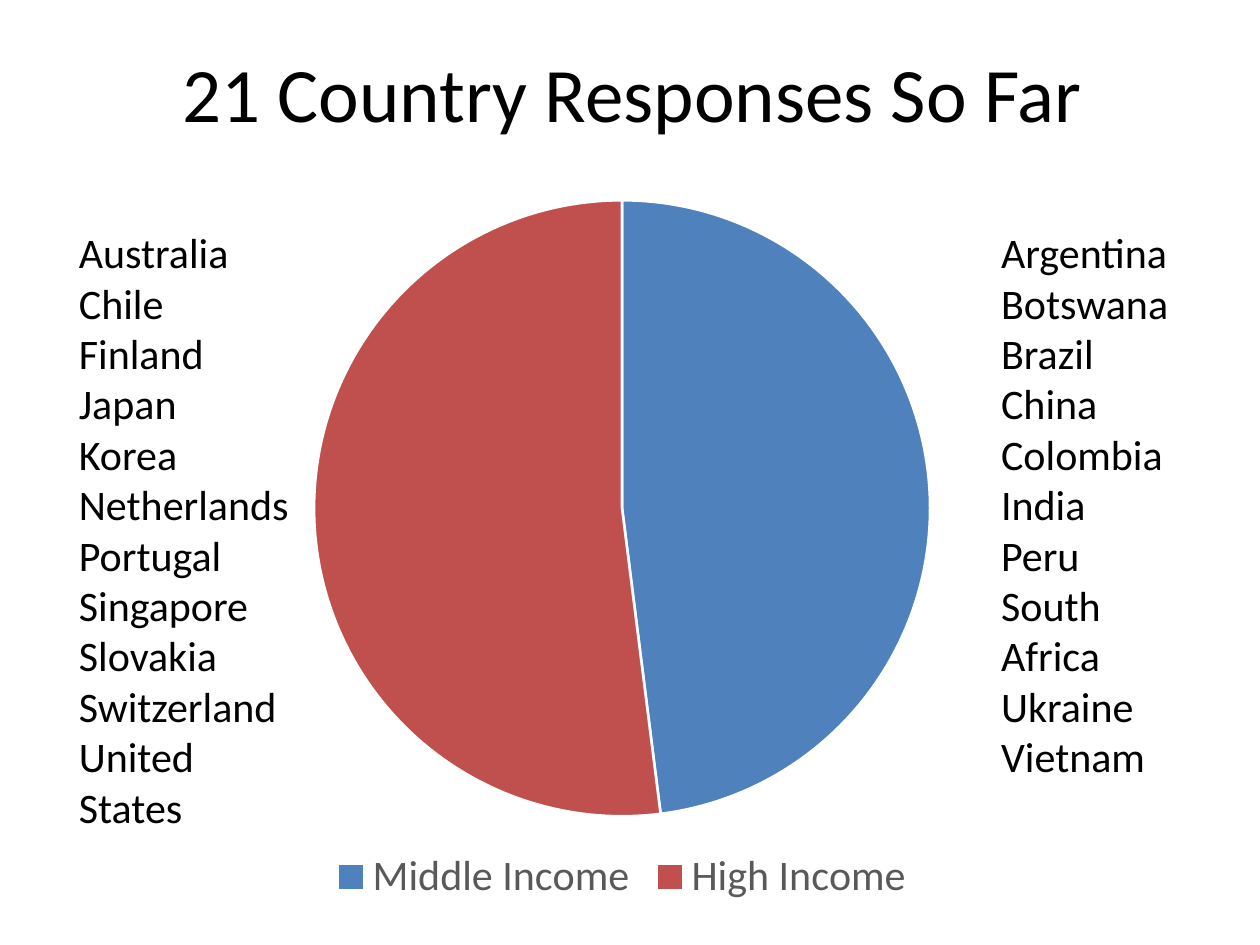
"""Build the slide showing country responses by income group."""
from dataclasses import dataclass

from pptx import Presentation
from pptx.chart.data import CategoryChartData
from pptx.dml.color import RGBColor
from pptx.enum.chart import XL_CHART_TYPE, XL_LEGEND_POSITION
from pptx.enum.text import MSO_ANCHOR, MSO_AUTO_SIZE, PP_ALIGN
from pptx.util import Pt

PIE = XL_CHART_TYPE.PIE
LEGEND_BOTTOM = XL_LEGEND_POSITION.BOTTOM
MIDDLE = MSO_ANCHOR.MIDDLE
GROW = MSO_AUTO_SIZE.SHAPE_TO_FIT_TEXT
CENTER = PP_ALIGN.CENTER
LEFT = PP_ALIGN.LEFT

TITLE = "21 Country Responses So Far"
HIGH_INCOME = ["Australia", "Chile", "Finland", "Japan", "Korea", "Netherlands",
               "Portugal", "Singapore", "Slovakia", "Switzerland", "United States"]
MIDDLE_INCOME = ["Argentina", "Botswana", "Brazil", "China", "Colombia", "India",
                 "Peru", "South Africa", "Ukraine", "Vietnam"]
SHARES = {"Middle Income": 48, "High Income": 52}

TITLE_BOX = (51, 0, 621, 104.5)
CHART_BOX = (99.5, 104.5, 512, 416)
COUNTRY_LISTS = [(HIGH_INCOME, (38, 126, 136, 356.5)),
                 (MIDDLE_INCOME, (565, 126, 119, 327))]


@dataclass(frozen=True)
class Theme:
    font: str = "Calibri"
    title_size: int = 44
    body_size: int = 24
    chart_size: int = 10
    text: str = "000000"
    legend: str = "595959"
    edge: str = "FFFFFF"
    slices: tuple = ("4F81BD", "C0504D")


THEME = Theme()


def points(box):
    return [Pt(length) for length in box]


def style_font(font, size, color):
    font.name = THEME.font
    font.size = Pt(size)
    font.color.rgb = RGBColor.from_string(color)


def style_text(frame, size, alignment):
    for paragraph in frame.paragraphs:
        paragraph.alignment = alignment
        for run in paragraph.runs:
            style_font(run.font, size, THEME.text)


def add_title(slide):
    title = slide.shapes.title
    title.left, title.top, title.width, title.height = points(TITLE_BOX)
    frame = title.text_frame
    frame.text = TITLE
    frame.vertical_anchor = MIDDLE
    style_text(frame, THEME.title_size, CENTER)


def add_income_chart(slide):
    data = CategoryChartData()
    data.categories = list(SHARES)
    data.add_series("Series 1", list(SHARES.values()))
    chart = slide.shapes.add_chart(PIE, *points(CHART_BOX), data).chart
    style_font(chart.font, THEME.chart_size, THEME.text)
    chart.has_title = False
    chart.has_legend = True
    chart.legend.position = LEGEND_BOTTOM
    chart.legend.include_in_layout = False
    style_font(chart.legend.font, THEME.body_size, THEME.legend)
    plot = chart.plots[0]
    plot.vary_by_categories = True
    for index, color in enumerate(THEME.slices):
        wedge = plot.series[0].points[index].format
        wedge.fill.solid()
        wedge.fill.fore_color.rgb = RGBColor.from_string(color)
        wedge.line.color.rgb = RGBColor.from_string(THEME.edge)
        wedge.line.width = Pt(1.5)


def add_countries(slide, countries, box):
    frame = slide.shapes.add_textbox(*points(box)).text_frame
    frame.word_wrap = True
    frame.auto_size = GROW
    frame.text = "\n".join(countries)
    style_text(frame, THEME.body_size, LEFT)


def main():
    deck = Presentation()
    deck.slide_width, deck.slide_height = Pt(720), Pt(540)
    slide = deck.slides.add_slide(deck.slide_layouts[5])
    add_income_chart(slide)
    add_title(slide)
    for countries, box in COUNTRY_LISTS:
        add_countries(slide, countries, box)
    deck.save("out.pptx")


if __name__ == "__main__":
    main()
